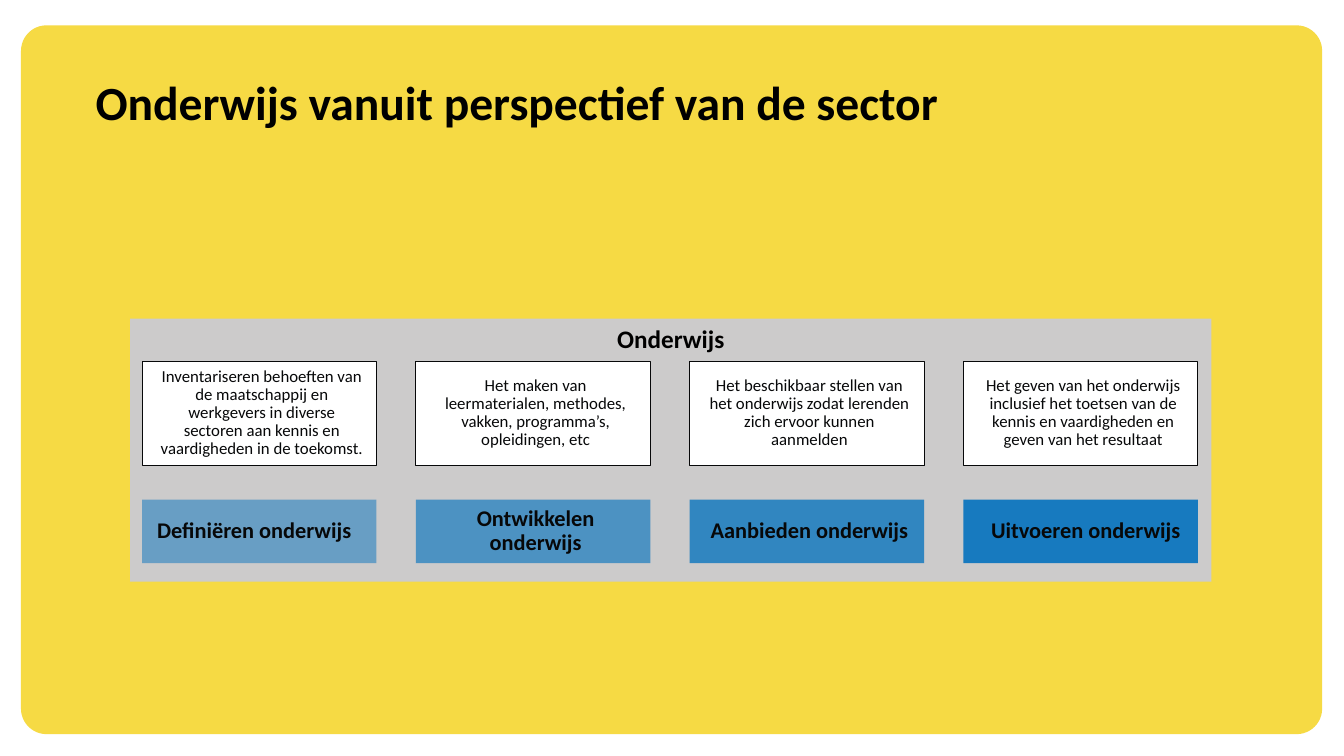
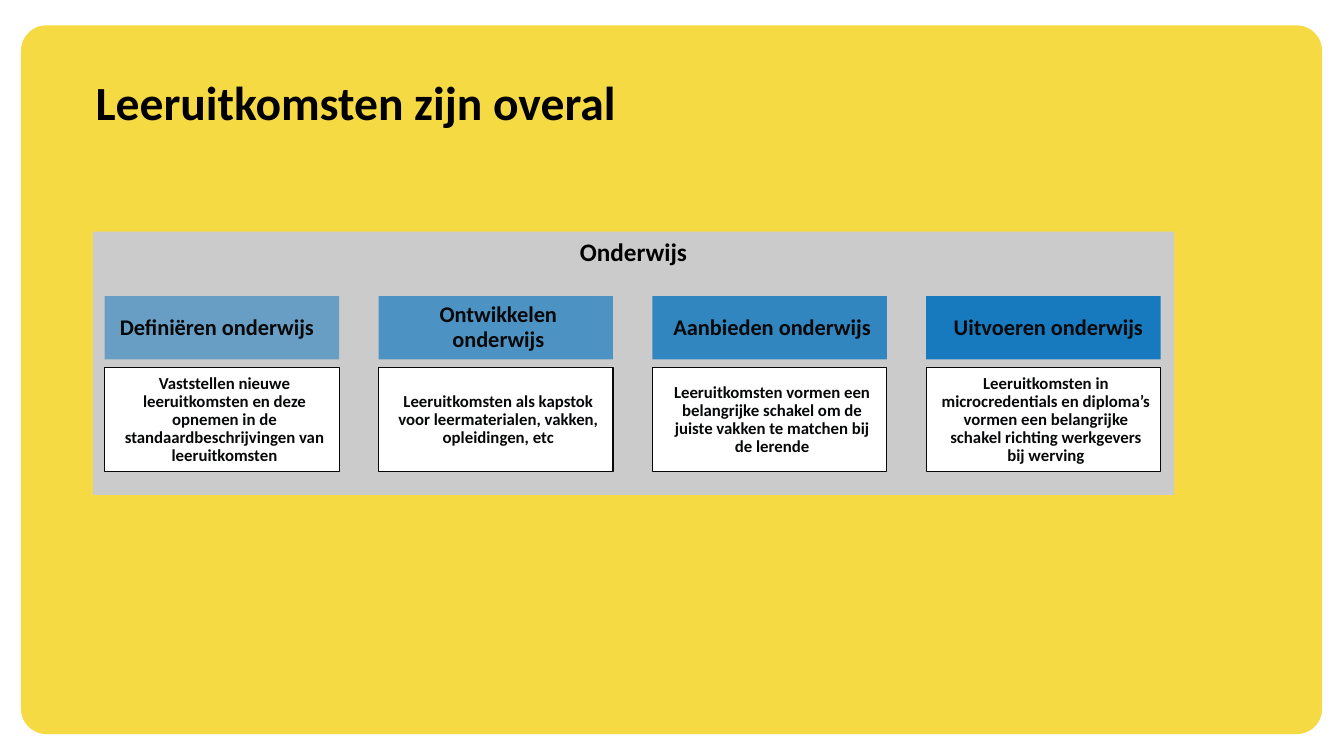
from lxml import etree
from pptx import Presentation
from pptx.dml.color import RGBColor
from pptx.enum.shapes import MSO_SHAPE as SHAPE
from pptx.enum.text import MSO_ANCHOR as ANCHOR, MSO_AUTO_SIZE as AUTO_SIZE, PP_ALIGN as ALIGN
from pptx.oxml.ns import qn
from pptx.util import Cm, Pt

FONT = "Calibri"
COLORS = {"yellow": "F6DA44", "grey": "CCCBCB", "blue": "177ABF",
          "white": "FFFFFF", "black": "000000", "ink": "070809"}

# Grid of the education panel, in cm
PANEL_W, PANEL_H = 27.25, 6.63
MARGIN, PITCH, BOX_W = 0.3, 6.9, 5.91
STEP_H, NOTE_H = 1.6, 2.62

# Process steps: label, opacity of the blue, alignment
STEPS = [
    ("Definiëren onderwijs", 55, ALIGN.LEFT),
    ("Ontwikkelen onderwijs", 70, ALIGN.CENTER),
    ("Aanbieden onderwijs", 85, ALIGN.CENTER),
    (" Uitvoeren onderwijs", 100, ALIGN.CENTER),
]

# Panel position, and offsets of steps and notes below the panel top, in cm
SLIDES = [
    {"title": "Onderwijs vanuit perspectief van de sector",
     "left": 3.28, "top": 8.03, "step_y": 4.56, "note_y": 1.07, "bold": False,
     "notes": [
         "Inventariseren behoeften van de maatschappij en werkgevers in diverse "
         "sectoren aan kennis en vaardigheden in de toekomst.",
         "Het maken van leermaterialen, methodes, vakken, programma’s, opleidingen, etc",
         "Het beschikbaar stellen van het onderwijs zodat lerenden zich ervoor "
         "kunnen aanmelden",
         "Het geven van het onderwijs inclusief het toetsen van de kennis en "
         "vaardigheden en geven van het resultaat",
     ]},
    {"title": "Leeruitkomsten zijn overal",
     "left": 2.34, "top": 5.84, "step_y": 1.62, "note_y": 3.43, "bold": True,
     "notes": [
         "Vaststellen nieuwe leeruitkomsten en deze opnemen in de "
         "standaardbeschrijvingen van leeruitkomsten",
         "Leeruitkomsten als kapstok voor leermaterialen, vakken, opleidingen, etc",
         "Leeruitkomsten vormen een belangrijke schakel om de juiste vakken te "
         "matchen bij de lerende",
         "Leeruitkomsten in microcredentials en diploma’s vormen een belangrijke "
         "schakel richting werkgevers bij werving",
     ]},
]


def add_box(s, left, top, width, height, fill, shape=SHAPE.RECTANGLE):
    sp = s.shapes.add_shape(shape, Cm(left), Cm(top), Cm(width), Cm(height))
    sp.shadow.inherit = False
    sp.fill.solid()
    sp.fill.fore_color.rgb = RGBColor.from_string(COLORS[fill])
    sp.line.fill.background()
    return sp


def set_text(sp, text, size, color, bold=True, align=ALIGN.CENTER,
             anchor=ANCHOR.MIDDLE, indent=0.13, spacing=0.9):
    tf = sp.text_frame
    tf.text = text
    tf.word_wrap = True
    tf.auto_size = AUTO_SIZE.NONE
    tf.vertical_anchor = anchor
    p = tf.paragraphs[0]
    p.alignment = align
    p.line_spacing = spacing
    p.space_before = Pt(0)
    p._p.get_or_add_pPr().set("marL", str(Cm(indent)))
    font = p.runs[0].font
    font.name, font.size, font.bold = FONT, Pt(size), bold
    font.color.rgb = RGBColor.from_string(COLORS[color])


prs = Presentation()
prs.slide_width, prs.slide_height = Cm(33.87), Cm(19.05)

# Shared layout: title position
layout = prs.slide_layouts[5]
title = layout.placeholders[0]
title.left, title.top, title.width, title.height = Cm(2.41), Cm(2.01), Cm(29.46), Cm(0.94)
tf = title.text_frame
tf.margin_left = tf.margin_top = tf.margin_right = tf.margin_bottom = 0

for number, content in enumerate(SLIDES):
    s = prs.slides.add_slide(layout)

    # Yellow background card, placed once on the layout
    if number == 0:
        card = add_box(s, 0.53, 0.64, 32.79, 17.86, "yellow", SHAPE.ROUNDED_RECTANGLE)
        card.adjustments[0] = 0.036
        layout.shapes._spTree.insert(2, card._element)

    # Title
    set_text(s.shapes.title, content["title"], 34, "black",
             align=ALIGN.LEFT, anchor=ANCHOR.TOP, indent=0)

    # Grey panel
    left, top = content["left"], content["top"]
    panel = add_box(s, left, top, PANEL_W, PANEL_H, "grey")
    set_text(panel, "Onderwijs", 18, "black", anchor=ANCHOR.TOP, indent=0, spacing=1.0)

    # Columns: a blue step and a white note each
    for col, ((label, opacity, align), note) in enumerate(zip(STEPS, content["notes"])):
        x = left + MARGIN + col * PITCH
        step = add_box(s, x, top + content["step_y"], BOX_W, STEP_H, "blue")
        if opacity < 100:
            clr = step.fill._xPr.find(qn("a:solidFill"))[0]
            etree.SubElement(clr, qn("a:alpha")).set("val", str(opacity * 1000))
        set_text(step, label, 16, "ink", align=align)

        box = add_box(s, x, top + content["note_y"], BOX_W, NOTE_H, "white")
        box.line.color.rgb = RGBColor.from_string(COLORS["ink"])
        box.line.width = Pt(0.75)
        set_text(box, note, 12, "ink", bold=content["bold"])

prs.save("out.pptx")
